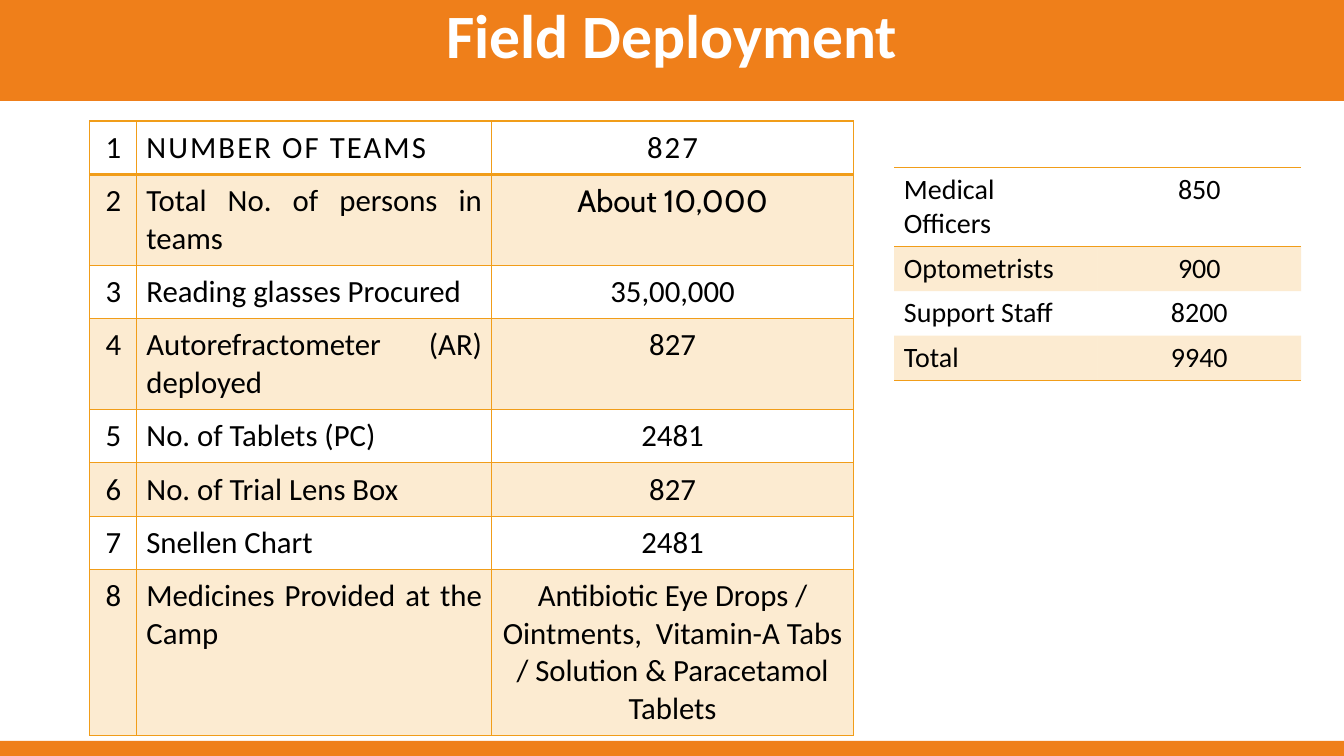
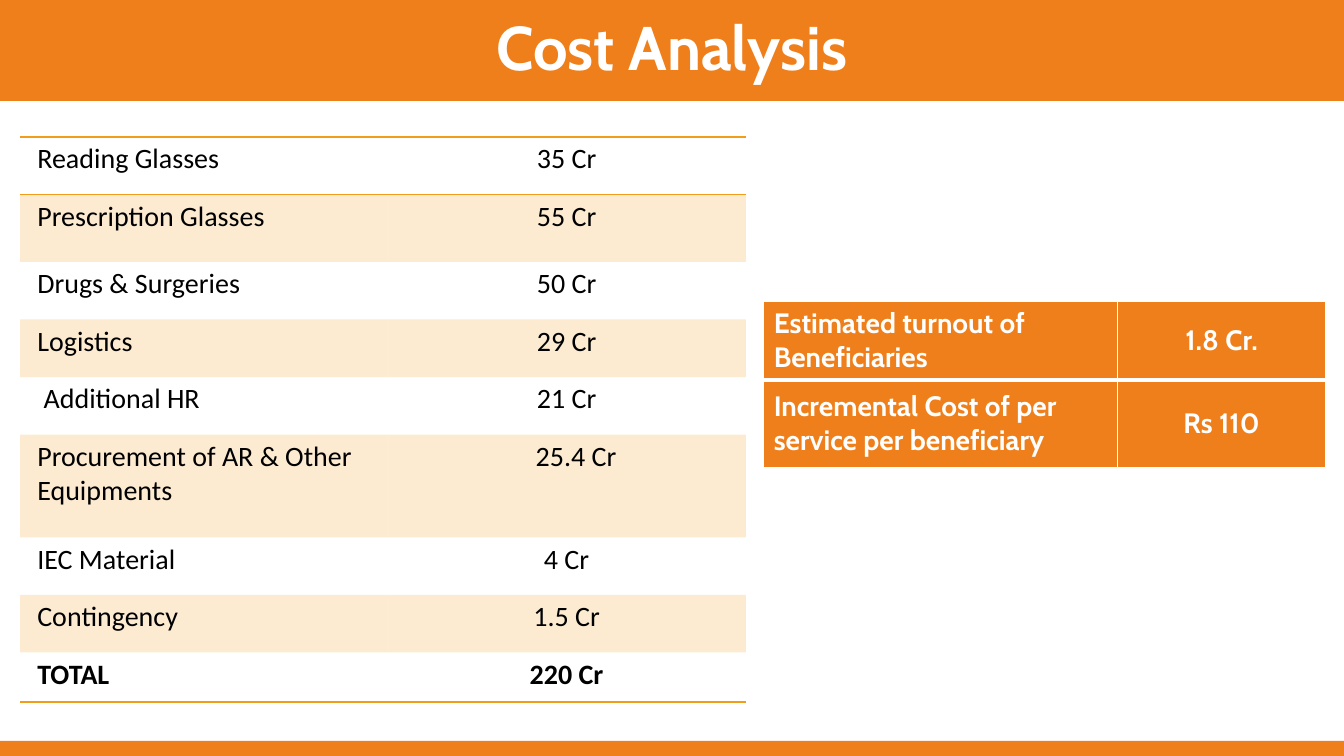
import pptx
import pptx.util
import pptx.dml.color
import pptx.enum.shapes
import pptx.enum.text
import pptx.oxml.ns
from dataclasses import dataclass
from lxml import etree

Cm = pptx.util.Cm
Pt = pptx.util.Pt
RGB = pptx.dml.color.RGBColor.from_string
Anchor = pptx.enum.text.MSO_ANCHOR
Align = pptx.enum.text.PP_ALIGN
qn = pptx.oxml.ns.qn

NO_STYLE = "{2D5ABB26-0587-4C30-8999-92F81FD0307C}"


@dataclass(frozen=True)
class Theme:
    band: str = "EF7F1A"
    rule: str = "F19D19"
    white: str = "FFFFFF"
    ink: str = "000000"
    body: str = "Calibri"
    accent: str = "Cabin"
    title_size: int = 44
    large: int = 22
    normal: int = 20
    tint: int = 20  # opacity of striped rows, percent
    width: float = 33.87
    height: float = 19.05
    title_height: float = 2.54
    footer_height: float = 0.38


class Deck:
    """Holds the style and the current slide."""

    def __init__(self, theme):
        self.theme = theme
        self.prs = pptx.Presentation()
        self.prs.slide_width = Cm(theme.width)
        self.prs.slide_height = Cm(theme.height)
        self.s = None

    def slide(self, title, font, anchor):
        self.s = self.prs.slides.add_slide(self.prs.slide_layouts[5])
        self.footer()
        self.title(title, font, anchor)

    def footer(self):
        t = self.theme
        sp = self.s.shapes.add_shape(
            pptx.enum.shapes.MSO_SHAPE.RECTANGLE, 0,
            Cm(t.height - t.footer_height), Cm(t.width), Cm(t.footer_height))
        sp.shadow.inherit = False
        sp.fill.solid()
        sp.fill.fore_color.rgb = RGB(t.band)
        sp.line.fill.background()

    def title(self, text, font, anchor):
        t = self.theme
        sp = self.s.shapes.title
        sp.left, sp.top = 0, 0
        sp.width, sp.height = Cm(t.width), Cm(t.title_height)
        sp.fill.solid()
        sp.fill.fore_color.rgb = RGB(t.band)
        tf = sp.text_frame
        tf.auto_size = pptx.enum.text.MSO_AUTO_SIZE.NONE
        tf.word_wrap = True
        tf.vertical_anchor = anchor
        p = tf.paragraphs[0]
        p.line_spacing = 0.9
        self.run(p, text, Align.CENTER, font, t.title_size, t.white, True)

    def run(self, p, text, align, font, size, color, bold=False):
        p.alignment = align
        r = p.add_run()
        r.text = text
        r.font.name = font
        r.font.size = Pt(size)
        r.font.color.rgb = RGB(color)
        r.font.bold = bold
        return r

    def table(self, left, top, cols, heights, rows, aligns, borders, *,
              size=None, font=None, color=None, fill=None, bold=False,
              insets=(0.25, 0.13), anchor=Anchor.TOP):
        """Without a fill, every second row is tinted. borders(row) gives
        {side: width} or {side: (width, color)}."""
        t = self.theme
        tbl = self.s.shapes.add_table(
            len(rows), len(cols), Cm(left), Cm(top),
            Cm(sum(cols)), Cm(sum(heights))).table
        tbl.first_row = tbl.horz_banding = False
        tbl._tbl.tblPr.find(qn("a:tableStyleId")).text = NO_STYLE
        for col, width in zip(tbl.columns, cols):
            col.width = Cm(width)
        for i, (row, height) in enumerate(zip(rows, heights)):
            tbl.rows[i].height = Cm(height)
            for j, (text, align) in enumerate(zip(row, aligns)):
                cell = tbl.cell(i, j)
                cell.margin_left = cell.margin_right = Cm(insets[0])
                cell.margin_top = cell.margin_bottom = Cm(insets[1])
                cell.vertical_anchor = anchor
                self.borders(cell, borders(i))
                self.cell_fill(cell, fill, i % 2 == 1)
                self.run(cell.text_frame.paragraphs[0], text, align,
                         font or t.body, size or t.normal,
                         color or t.ink, bold)
        return tbl

    def borders(self, cell, sides):
        tcPr = cell._tc.get_or_add_tcPr()
        for side in "LRTB":
            if side not in sides:
                continue
            width, color = sides[side]
            ln = etree.SubElement(tcPr, qn("a:ln" + side), w=str(Pt(width)))
            solid = etree.SubElement(ln, qn("a:solidFill"))
            etree.SubElement(solid, qn("a:srgbClr"), val=color)

    def cell_fill(self, cell, fill, striped):
        if not fill and not striped:
            cell.fill.background()
            return
        cell.fill.solid()
        cell.fill.fore_color.rgb = RGB(fill or self.theme.rule)
        if not fill:
            clr = cell._tc.tcPr.find(".//" + qn("a:solidFill") + "[last()]")
            clr = cell._tc.tcPr.find(qn("a:solidFill")).find(qn("a:srgbClr"))
            etree.SubElement(clr, qn("a:alpha"),
                             val=str(self.theme.tint * 1000))

    def outer_rules(self, count):
        """Rules above and below the first row and below the last."""
        line = (1, self.theme.rule)

        def sides(i):
            if i == 0:
                return {"T": line, "B": line}
            return {"B": line} if i == count - 1 else {}
        return sides

    def grid(self, color, heavy):
        """A thin grid with a heavier rule below the first row."""
        def sides(i):
            lines = dict.fromkeys("LRTB", (1, color))
            if i < 2:
                lines["BT"[i]] = (heavy, color)
            return lines
        return sides

    def indent(self, cell, left):
        cell.text_frame.paragraphs[0]._p.get_or_add_pPr().set(
            "marL", str(Cm(left)))


def field_deployment(deck):
    t = deck.theme
    deck.slide("Field Deployment", t.body, Anchor.TOP)

    # Equipment and teams
    items = [
        ("NUMBER OF TEAMS", "827"),
        ("Total No. of persons in teams", "About 10,000"),
        ("Reading glasses Procured", "35,00,000"),
        ("Autorefractometer (AR) deployed", "827"),
        ("No. of Tablets (PC)", "2481"),
        ("No. of Trial Lens Box", "827"),
        ("Snellen Chart", "2481"),
        ("Medicines Provided at the Camp",
         "Antibiotic Eye Drops / Ointments,  Vitamin-A Tabs / Solution"
         " & Paracetamol Tablets"),
    ]
    rows = [(str(n), *item) for n, item in enumerate(items, 1)]
    one, two, four = 1.33, 2.28, 4.18
    tbl = deck.table(
        2.26, 3.05, (1.19, 8.94, 9.12),
        (one, two, one, two, one, one, one, four), rows,
        (Align.CENTER, Align.JUSTIFY, Align.CENTER), deck.grid(t.rule, 2),
        size=t.large, insets=(0.24, 0.2))
    for cell in tbl.rows[0].cells:
        p = cell.text_frame.paragraphs[0]
        p.runs[0].font._element.set("spc", "150")
    tbl.cell(0, 1).text_frame.paragraphs[0].alignment = Align.LEFT
    tbl.cell(1, 2).text_frame.paragraphs[0].runs[0].font.name = t.accent

    # Staff
    staff = [("Medical Officers", "850"), ("Optometrists", "900"),
             ("Support Staff", "8200"), ("Total", "9940")]
    deck.table(22.53, 4.22, (5.13, 5.13), (1.98, 1.11, 1.11, 1.11), staff,
               (Align.LEFT, Align.CENTER), deck.outer_rules(len(staff)))


def cost_analysis(deck):
    t = deck.theme
    deck.slide("Cost Analysis", t.accent, Anchor.MIDDLE)

    # Costs by heading
    costs = [
        ("Reading Glasses", "35 Cr"),
        ("Prescription Glasses", "55 Cr"),
        ("Drugs & Surgeries", "50 Cr"),
        ("Logistics", "29 Cr"),
        ("Additional HR", "21 Cr"),
        ("Procurement of AR & Other Equipments", "25.4 Cr"),
        ("IEC Material", "4 Cr"),
        ("Contingency", "1.5 Cr"),
        ("TOTAL", "220 Cr"),
    ]
    row = 1.45
    tbl = deck.table(
        0.51, 3.45, (9.25, 9.04),
        (row, 1.7, row, row, row, 2.59, row, row, 1.25), costs,
        (Align.LEFT, Align.CENTER), deck.outer_rules(len(costs)),
        insets=(0.43, 0.13))
    deck.indent(tbl.cell(4, 0), 0.16)
    deck.indent(tbl.cell(5, 1), 0.48)
    for cell in tbl.rows[len(costs) - 1].cells:
        cell.text_frame.paragraphs[0].runs[0].font.bold = True

    # Cost per beneficiary
    summary = [("Estimated turnout of Beneficiaries", "1.8 Cr."),
               ("Incremental Cost of per service per beneficiary", "Rs 110")]
    deck.table(19.25, 7.6, (8.92, 5.23), (1.98, 2.2), summary,
               (Align.LEFT, Align.CENTER), deck.grid(t.white, 3),
               font=t.accent, color=t.white, fill=t.band, bold=True,
               anchor=Anchor.MIDDLE)


def main():
    deck = Deck(Theme())
    field_deployment(deck)
    cost_analysis(deck)
    deck.prs.save("out.pptx")


if __name__ == "__main__":
    main()
